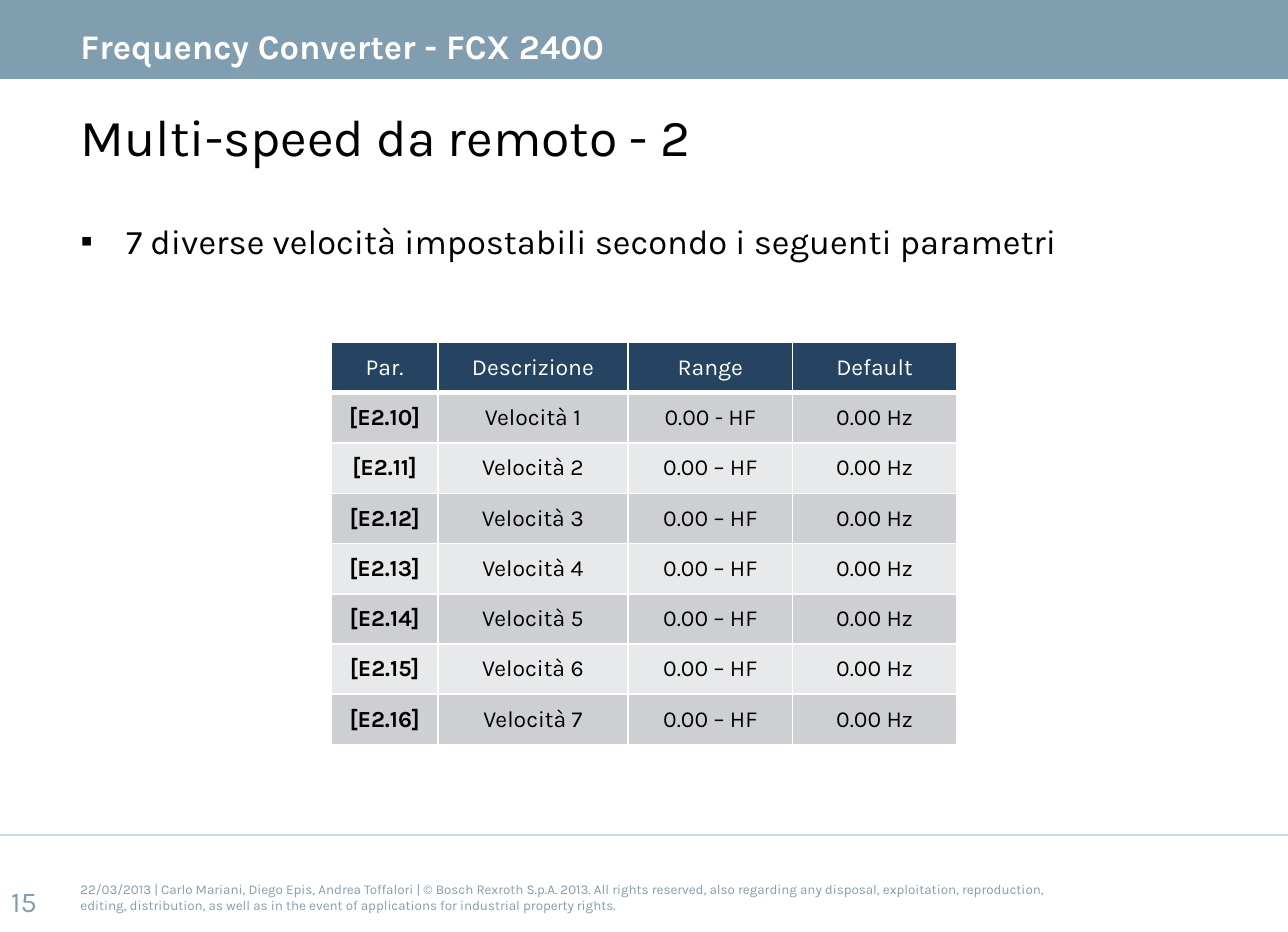
from lxml.etree import SubElement
from pptx import Presentation
from pptx.dml.color import RGBColor
from pptx.enum.shapes import MSO_CONNECTOR, MSO_SHAPE
from pptx.enum.text import MSO_ANCHOR, MSO_AUTO_SIZE, PP_ALIGN
from pptx.oxml.ns import qn
from pptx.util import Pt

FONT = "Karla"
COLORS = {
    "white": "FFFFFF", "black": "000000", "steel": "819EB1", "rule": "CFDDE7",
    "header": "264461", "dark_band": "CDCFD2", "light_band": "E8E9EA",
}
SLIDE_WIDTH, SLIDE_HEIGHT = 672, 486
MARGIN = 42
COLUMN_WIDTHS = [55.4, 99.4, 85.7, 85.7]
ROW_HEIGHT = 26.2
HEADINGS = ["Par.", "Descrizione", "Range", "Default"]
COPYRIGHT = (
    "22/03/2013 | Carlo Mariani, Diego Epis, Andrea Toffalori | "
    "© Bosch Rexroth S.p.A. 2013. All rights reserved, also regarding any disposal, "
    "exploitation, reproduction, editing, distribution, as well as in the event of "
    "applications for industrial property rights."
)


def color(name):
    return RGBColor.from_string(COLORS[name])


def add_run(paragraph, text, size, color_name, bold=False):
    run = paragraph.add_run()
    run.text = text
    run.font.name = FONT
    run.font.size = Pt(size)
    run.font.bold = bold
    run.font.color.rgb = color(color_name)


def place(shape, left, top, width, height):
    shape.left, shape.top, shape.width, shape.height = map(Pt, (left, top, width, height))


def prepare_frame(shape, anchor=MSO_ANCHOR.TOP, top_inset=0, line_spacing=1.0, wrap=True):
    """Set up the text frame and return its first paragraph."""
    frame = shape.text_frame
    frame.auto_size = MSO_AUTO_SIZE.NONE
    frame.word_wrap = wrap
    frame.vertical_anchor = anchor
    frame.margin_left = frame.margin_right = frame.margin_bottom = 0
    frame.margin_top = Pt(top_inset)
    paragraph = frame.paragraphs[0]
    paragraph.alignment = PP_ALIGN.LEFT
    paragraph.line_spacing = line_spacing
    paragraph.space_before = 0
    return paragraph


def add_text(slide, box, text, size, color_name, bold=False, **frame_options):
    shape = slide.shapes.add_textbox(*map(Pt, box))
    add_run(prepare_frame(shape, **frame_options), text, size, color_name, bold)


def add_rule(slide, y, color_name):
    line = slide.shapes.add_connector(
        MSO_CONNECTOR.STRAIGHT, 0, Pt(y), Pt(SLIDE_WIDTH), Pt(y))
    line.line.color.rgb = color(color_name)
    line.line.width = Pt(1)
    SubElement(line._element.spPr, qn("a:effectLst"))


def add_header_bar(slide):
    bar = slide.shapes.add_shape(MSO_SHAPE.RECTANGLE, 0, 0, Pt(SLIDE_WIDTH), Pt(41.8))
    bar.shadow.inherit = False
    bar.fill.solid()
    bar.fill.fore_color.rgb = color("steel")
    bar.line.fill.background()


def fill_title(shape, text):
    place(shape, MARGIN, 50.4, 600.5, 36.7)
    paragraph = prepare_frame(shape, top_inset=0.7, line_spacing=1.11)
    add_run(paragraph, text, 27, "black")


def fill_bullet(shape, text):
    place(shape, MARGIN, 107.3, 576, 39.6)
    paragraph = prepare_frame(shape, top_inset=5, line_spacing=1.11)
    properties = paragraph._p.get_or_add_pPr()
    properties.set("marL", str(Pt(23.8)))
    properties.set("indent", str(Pt(-23.8)))
    SubElement(properties, qn("a:buChar"), char="▪")
    add_run(paragraph, text, 18, "black")


def set_borders(cell, bottom_width):
    properties = cell._tc.get_or_add_tcPr()
    for side, width in (("L", 1), ("R", 1), ("T", 1), ("B", bottom_width)):
        border = SubElement(properties, qn(f"a:ln{side}"), w=str(Pt(width)))
        fill = SubElement(border, qn("a:solidFill"))
        SubElement(fill, qn("a:srgbClr"), val=COLORS["white"])


def fill_cell(cell, text, fill_name, color_name, bold=False, bottom_width=1):
    set_borders(cell, bottom_width)
    cell.fill.solid()
    cell.fill.fore_color.rgb = color(fill_name)
    cell.vertical_anchor = MSO_ANCHOR.MIDDLE
    paragraph = cell.text_frame.paragraphs[0]
    paragraph.alignment = PP_ALIGN.CENTER
    add_run(paragraph, text, 12, color_name, bold)


def add_speed_table(slide):
    speeds = [
        [f"[E2.{9 + number}]", f"Velocità {number}",
         "0.00 - HF" if number == 1 else "0.00 – HF", "0.00 Hz"]
        for number in range(1, 8)
    ]
    row_count = len(speeds) + 1
    table = slide.shapes.add_table(
        row_count, len(HEADINGS), Pt(173), Pt(178.7),
        Pt(sum(COLUMN_WIDTHS)), Pt(ROW_HEIGHT * row_count)).table
    table.horz_banding = False
    for column, width in zip(table.columns, COLUMN_WIDTHS):
        column.width = Pt(width)
    for row in table.rows:
        row.height = Pt(ROW_HEIGHT)
    for index, heading in enumerate(HEADINGS):
        fill_cell(table.cell(0, index), heading, "header", "white", bottom_width=3)
    for row_index, values in enumerate(speeds, start=1):
        band = "dark_band" if row_index % 2 else "light_band"
        for index, value in enumerate(values):
            fill_cell(table.cell(row_index, index), value, band, "black", bold=index == 0)


def main():
    presentation = Presentation()
    presentation.slide_width = Pt(SLIDE_WIDTH)
    presentation.slide_height = Pt(SLIDE_HEIGHT)
    slide = presentation.slides.add_slide(presentation.slide_layouts[1])

    add_header_bar(slide)
    add_rule(slide, 41.8, "white")
    add_rule(slide, 435.6, "rule")
    add_text(slide, (MARGIN, 456.5, 504, 23), COPYRIGHT, 7, "steel",
             anchor=MSO_ANCHOR.MIDDLE)
    add_text(slide, (MARGIN, 0, 576, 41), "Frequency Converter - FCX 2400", 18, "white",
             bold=True, anchor=MSO_ANCHOR.MIDDLE, top_inset=4.3, line_spacing=1.11)
    fill_title(slide.shapes.title, "Multi-speed da remoto - 2")
    add_speed_table(slide)
    fill_bullet(slide.placeholders[1],
                "7 diverse velocità impostabili secondo i seguenti parametri")
    add_text(slide, (5.8, 461, 30, 15), "15", 15, "steel", wrap=False)
    presentation.save("out.pptx")


if __name__ == "__main__":
    main()
